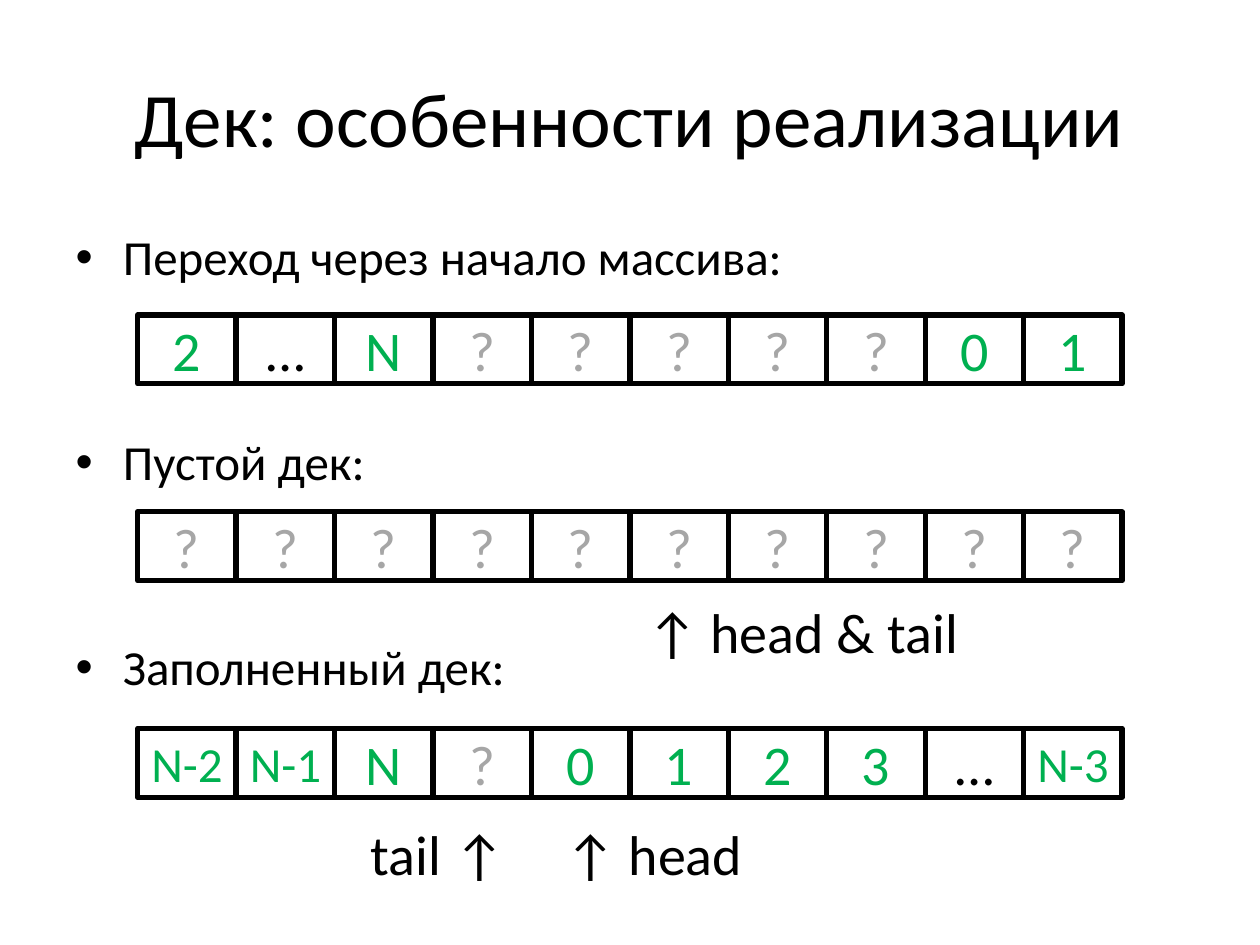
from dataclasses import dataclass

from pptx import Presentation
from pptx import util as u
from pptx.dml import color
from pptx.enum import shapes, text


@dataclass(frozen=True)
class Theme:
    font: str = "Calibri"
    ink: str = "000000"
    paper: str = "FFFFFF"
    used: str = "00B050"
    unused: str = "A6A6A6"
    title: int = 44
    body: int = 28
    cell: int = 32
    long_cell: int = 28


THEME = Theme()
CELL_LEFT, CELL_W, CELL_H = 78.75, 56.25, 39.4
BULLETS = ["Переход через начало массива:", "Пустой дек:", "Заполненный дек:"]
BULLET_GAP = 83.5
DEQUES = [
    (180, ["2", "…", "N", "?", "?", "?", "?", "?", "0", "1"]),
    (292.5, ["?"] * 10),
    (416.25, ["N-2", "N-1", "N", "?", "0", "1", "2", "3", "…", "N-3"]),
]
POINTERS = [
    ("↑ head & tail", 343.5, 337.5, 230.4, 46.1),
    ("tail ↑", 191.25, 461.5, 118.1, 51.8),
    ("↑ head", 314.6, 461.5, 118.1, 51.8),
]


def rgb(value):
    return color.RGBColor.from_string(value)


def add_run(p, words, size, ink=THEME.ink):
    r = p.add_run()
    r.text = words
    r.font.name = THEME.font
    r.font.size = u.Pt(size)
    r.font.color.rgb = rgb(ink)


def place(sp, left, top, width, height):
    sp.left, sp.top = u.Pt(left), u.Pt(top)
    sp.width, sp.height = u.Pt(width), u.Pt(height)


def fill_title(sp, words):
    place(sp, 36, 21.6, 648, 90)
    sp.text_frame.vertical_anchor = text.MSO_ANCHOR.MIDDLE
    p = sp.text_frame.paragraphs[0]
    p.alignment = text.PP_ALIGN.CENTER
    add_run(p, words, THEME.title)


def fill_bullets(sp, items):
    place(sp, 36, 126, 648, 356.4)
    tf = sp.text_frame
    tf.auto_size = text.MSO_AUTO_SIZE.NONE
    for i, item in enumerate(items):
        p = tf.add_paragraph() if i else tf.paragraphs[0]
        if i:
            p.space_before = u.Pt(BULLET_GAP)
        add_run(p, item, THEME.body)


def add_box(s, words, left, top, width, height, size, ink):
    sp = s.shapes.add_shape(
        shapes.MSO_SHAPE.RECTANGLE, u.Pt(left), u.Pt(top), u.Pt(width), u.Pt(height)
    )
    sp.shadow.inherit = False
    tf = sp.text_frame
    tf.word_wrap = True
    tf.vertical_anchor = text.MSO_ANCHOR.MIDDLE
    p = tf.paragraphs[0]
    p.alignment = text.PP_ALIGN.CENTER
    add_run(p, words, size, ink)
    return sp


def add_deque(s, top, values):
    inks = {"?": THEME.unused, "…": THEME.ink}
    for i, value in enumerate(values):
        size = THEME.long_cell if len(value) > 1 else THEME.cell
        ink = inks.get(value, THEME.used)
        sp = add_box(s, value, CELL_LEFT + i * CELL_W, top, CELL_W, CELL_H, size, ink)
        sp.fill.background()
        sp.line.color.rgb = rgb(THEME.ink)
        sp.line.width = u.Pt(3)


def add_pointer(s, words, left, top, width, height):
    sp = add_box(s, words, left, top, width, height, THEME.cell, THEME.ink)
    sp.fill.solid()
    sp.fill.fore_color.rgb = rgb(THEME.paper)
    sp.line.fill.background()


def main():
    """Build the slide on how a deque sits in a circular array."""
    prs = Presentation()
    prs.slide_width, prs.slide_height = u.Pt(720), u.Pt(540)
    s = prs.slides.add_slide(prs.slide_layouts[1])
    fill_title(s.shapes.title, "Дек: особенности реализации")
    fill_bullets(s.placeholders[1], BULLETS)
    for top, values in DEQUES:
        add_deque(s, top, values)
    for pointer in POINTERS:
        add_pointer(s, *pointer)
    prs.save("out.pptx")


if __name__ == "__main__":
    main()
